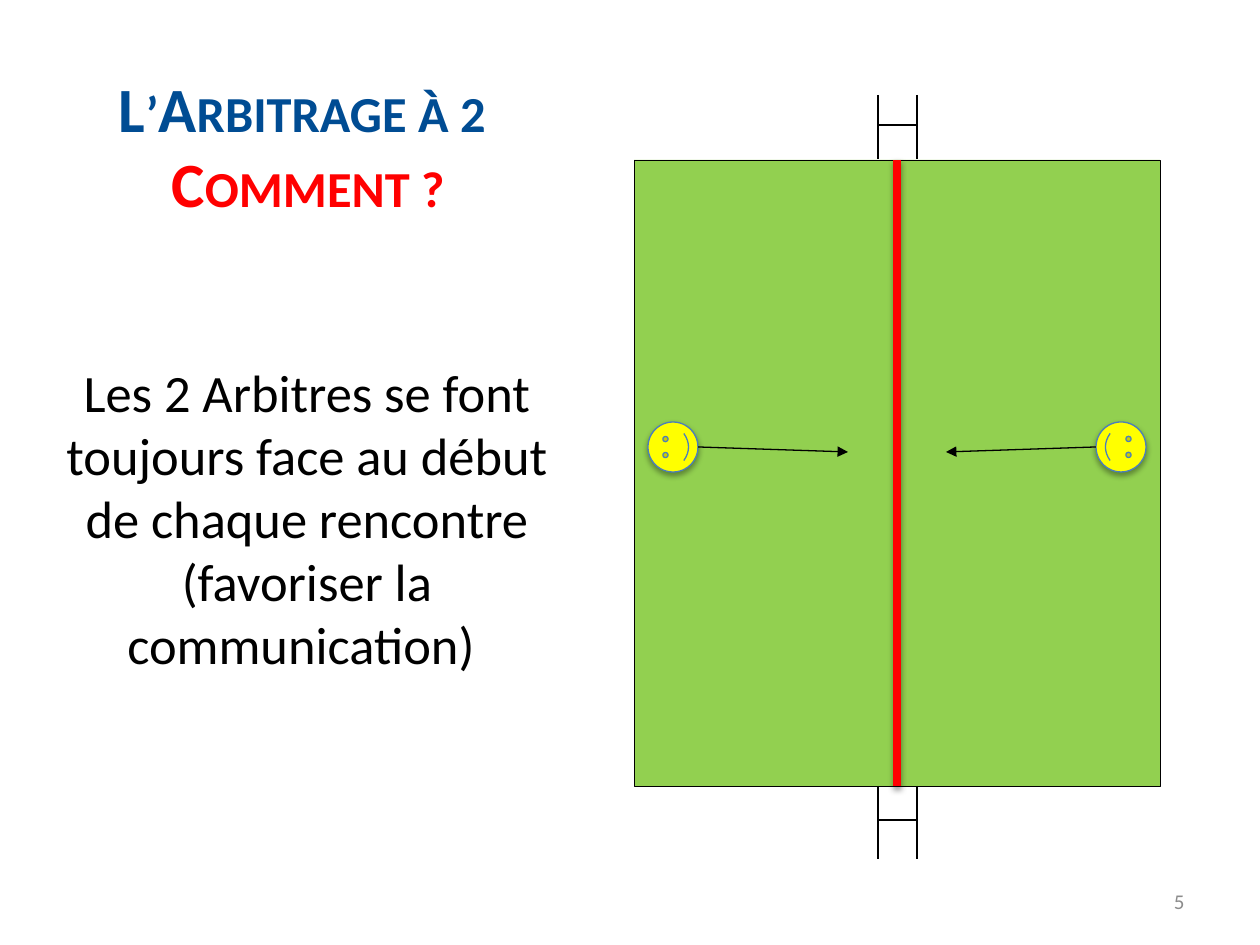
from lxml import etree
from pptx import Presentation
from pptx.dml.color import RGBColor
from pptx.enum.shapes import MSO_CONNECTOR, MSO_SHAPE
from pptx.enum.text import MSO_ANCHOR, PP_ALIGN
from pptx.oxml import parse_xml
from pptx.oxml.ns import qn
from pptx.util import Pt

PX = 914400 / 126
FONT = "Calibri"
LINE = MSO_CONNECTOR.STRAIGHT
RECT, SMILEY = MSO_SHAPE.RECTANGLE, MSO_SHAPE.SMILEY_FACE
TOP, MIDDLE = MSO_ANCHOR.TOP, MSO_ANCHOR.MIDDLE
CENTER, RIGHT = PP_ALIGN.CENTER, PP_ALIGN.RIGHT
COLORS = {
    "black": "000000", "blue": "004C93", "red": "FF0000", "grey": "8C8C8C",
    "green": "92D050", "yellow": "FFFF00", "edge": "4B7EBC",
}
SHADOW = (
    '<a:outerShdw xmlns:a="http://schemas.openxmlformats.org/drawingml/2006/main" '
    'blurRad="40000" dist="{}" dir="5400000" rotWithShape="0">'
    '<a:srgbClr val="000000"><a:alpha val="{}"/></a:srgbClr></a:outerShdw>'
)


def emu(*px):
    return [round(n * PX) for n in px]


def color(name):
    return RGBColor.from_string(COLORS[name])


def add_shadow(effects, dist, alpha):
    effects.append(parse_xml(SHADOW.format(dist, alpha)))


def add_text(slide, box, lines, size, align, anchor, bold=False, caps=False):
    """Write (text, color) lines, one paragraph each."""
    frame = slide.shapes.add_textbox(*emu(*box)).text_frame
    frame.word_wrap = True
    frame.vertical_anchor = anchor
    for i, (text, ink) in enumerate(lines):
        para = frame.paragraphs[0] if i == 0 else frame.add_paragraph()
        para.alignment = align
        run = para.add_run()
        run.text = text
        if caps:
            run.font._element.set("cap", "small")
        font = para.font
        font.name, font.size, font.bold = FONT, Pt(size), bold
        font.color.rgb = color(ink)


def add_shape(slide, kind, box, fill, edge, width):
    shape = slide.shapes.add_shape(kind, *emu(*box))
    shape.fill.solid()
    shape.fill.fore_color.rgb = color(fill)
    shape.line.color.rgb = color(edge)
    shape.line.width = Pt(width)
    shape.shadow.inherit = False
    return shape


def add_line(slide, start, end, ink="black", width=0.75, arrow=False):
    """Draw a line and return its effect list."""
    line = slide.shapes.add_connector(LINE, *emu(*start, *end))
    line.line.color.rgb = color(ink)
    line.line.width = Pt(width)
    if arrow:
        tail = etree.SubElement(line.line._ln, qn("a:tailEnd"))
        tail.set("type", "triangle")
    return etree.SubElement(line._element.spPr, qn("a:effectLst"))


def add_goal(slide, box, bar):
    """Draw two posts joined by a crossbar, bar px below the top."""
    x, y, w, h = box
    for post in (x, x + w):
        add_line(slide, (post, y), (post, y + h))
    add_line(slide, (x, y + bar), (x + w, y + bar))


def add_referee(slide, box, turn, way):
    """Draw a face with an arrow; way is 1 to the right, -1 to the left."""
    x, y, size = box
    face = add_shape(slide, SMILEY, (x, y, size, size), "yellow", "edge", 0.75)
    face.rotation = turn
    add_shadow(face._element.spPr.find(qn("a:effectLst")), 23000, 35000)
    mid = x + size // 2
    start = mid + way * size // 2, y + size // 2
    add_line(slide, start, (start[0] + way * 150, start[1] + 5), arrow=True)


def add_pitch(slide, box):
    x, y, w, h = box
    mid, gap, face = x + w // 2, 14, 50
    add_shape(slide, RECT, box, "green", "black", 0.25)
    add_goal(slide, (mid - 19, y - 65, 39, 64), 30)
    add_goal(slide, (mid - 19, y + h, 39, 73), 34)
    ball = add_line(slide, (mid, y), (mid, y + h), "red", 4.5)
    add_shadow(ball, 20000, 38000)
    row = y + 262
    add_referee(slide, (x + gap, row, face), 270, 1)
    add_referee(slide, (x + w - gap - face, row, face), 90, -1)


def main():
    deck = Presentation()
    deck.slide_width, deck.slide_height = emu(1260, 945)
    slide = deck.slides.add_slide(deck.slide_layouts[6])
    title = [("L’Arbitrage à 2 ", "blue"), ("Comment ?", "red")]
    body = [("Les 2 Arbitres se font toujours face au début de chaque "
             "rencontre (favoriser la communication) ", "black")]
    add_text(slide, (104, 66, 408, 158), title, 36, CENTER, MIDDLE, True, True)
    add_text(slide, (35, 354, 544, 356), body, 30, CENTER, TOP)
    add_text(slide, (903, 876, 294, 50), [("5", "grey")], 12, RIGHT, MIDDLE)
    add_pitch(slide, (634, 160, 526, 626))
    deck.save("out.pptx")


if __name__ == "__main__":
    main()
